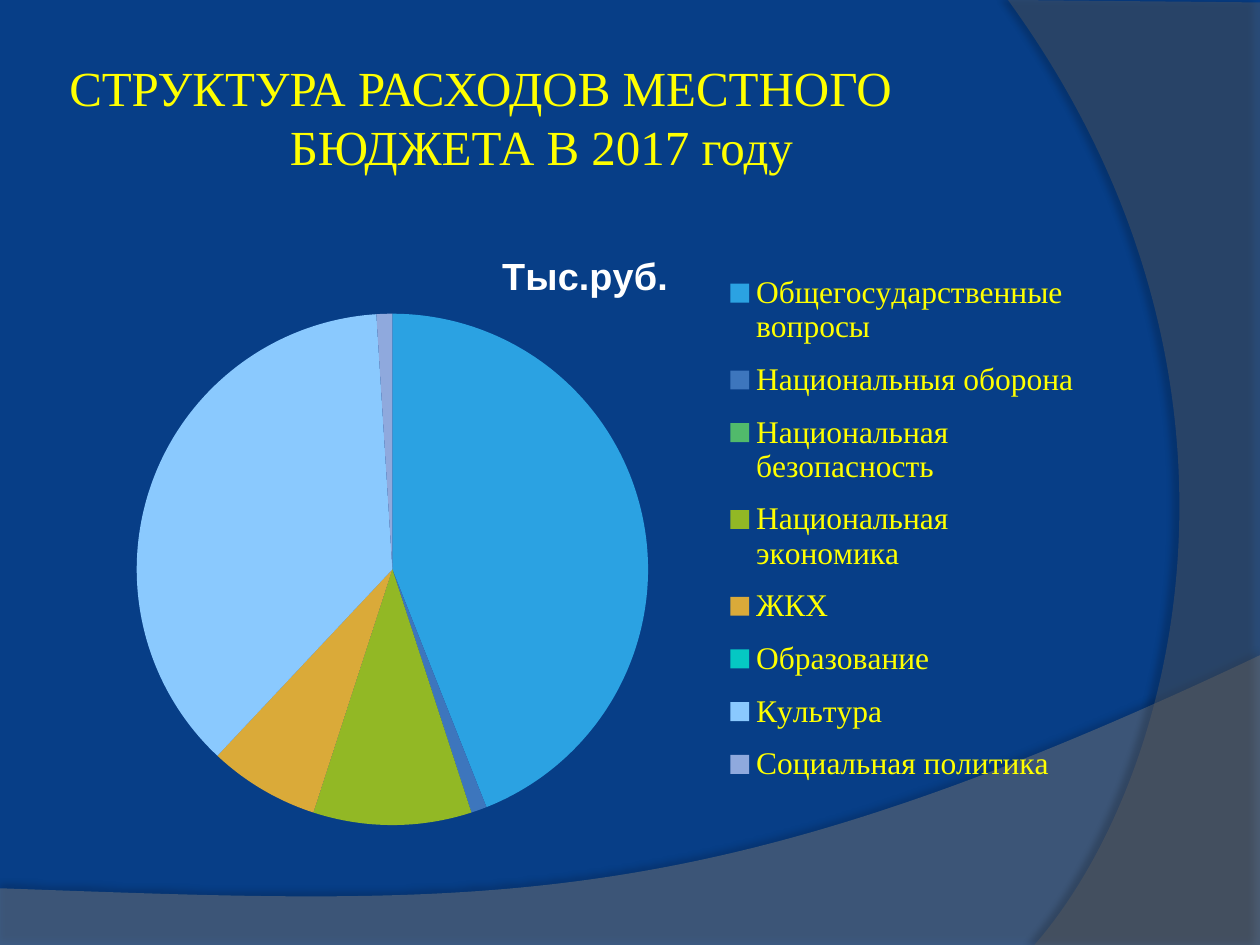
import pptx
import pptx.chart.data
import pptx.dml.color
import pptx.enum.chart
import pptx.enum.text
import pptx.oxml
import pptx.oxml.ns
import pptx.util
from lxml import etree

RGB = pptx.dml.color.RGBColor
qn = pptx.oxml.ns.qn
NAVY = RGB(0x07, 0x3E, 0x87)
WAVE_GREY = RGB(0x7F, 0x7F, 0x7F)
ARC_GREY = RGB(0x5E, 0x5E, 0x5E)
YELLOW = RGB(0xFF, 0xFF, 0x00)
WHITE = RGB(0xFF, 0xFF, 0xFF)
WIDTH, HEIGHT = pptx.util.Inches(10), pptx.util.Inches(7.5)
SERIF, SANS = "Times New Roman", "Arial"
UNITS = 1000  # outline units to the inch

EXPENSES = [
    ("Общегосударственные вопросы", 44, RGB(0x2B, 0xA2, 0xE2)),
    ("Национальныя оборона", 1, RGB(0x3D, 0x76, 0xBD)),
    ("Национальная безопасность", 0, RGB(0x51, 0xBA, 0x6B)),
    ("Национальная экономика", 10, RGB(0x92, 0xB8, 0x25)),
    ("ЖКХ", 7, RGB(0xDA, 0xAA, 0x39)),
    ("Образование", 0, RGB(0x05, 0xC8, 0xC3)),
    ("Культура", 37, RGB(0x8A, 0xC9, 0xFE)),
    ("Социальная политика", 1, RGB(0x8F, 0xA9, 0xDD)),
]


def box(left, top, width, height):
    """Turn shares of the slide's size into lengths."""
    return (int(WIDTH * left), int(HEIGHT * top),
            int(WIDTH * width), int(HEIGHT * height))


def bend_first_side(sp, corners, controls):
    """Make the first side of an outline a cubic curve."""
    line = next(sp._element.iter(qn("a:lnTo")))
    curve = etree.Element(qn("a:cubicBezTo"))
    left, top = (min(values) for values in zip(*corners))
    for x, y in controls:
        etree.SubElement(curve, qn("a:pt"),
                         x=str(round((x - left) * UNITS)),
                         y=str(round((y - top) * UNITS)))
    line.addprevious(curve)
    curve.append(line[0])
    line.getparent().remove(line)


def add_band(s, corners, controls, color, opacity,
             shadow_opacity, distance, direction):
    """Translucent outline, in inches, with a soft shadow."""
    points = [(round(x * UNITS), round(y * UNITS)) for x, y in corners]
    builder = s.shapes.build_freeform(
        *points[0], scale=pptx.util.Inches(1) / UNITS)
    builder.add_line_segments(points[1:], close=True)
    sp = builder.convert_to_shape()
    bend_first_side(sp, corners, controls)
    sp.fill.solid()
    sp.fill.fore_color.rgb = color
    sp.line.fill.background()
    clr = next(sp._element.spPr.iter(qn("a:srgbClr")))
    etree.SubElement(clr, qn("a:alpha"), val=str(opacity * 1000))
    sp.shadow.inherit = False
    effects = sp._element.spPr.find(qn("a:effectLst"))
    shadow = etree.SubElement(
        effects, qn("a:outerShdw"), blurRad=str(pptx.util.Pt(4)),
        dist=str(pptx.util.Pt(distance)), dir=str(direction * 60000),
        algn="ctr", rotWithShape="0")
    black = etree.SubElement(shadow, qn("a:srgbClr"), val="000000")
    etree.SubElement(black, qn("a:alpha"), val=str(shadow_opacity * 1000))


def set_font(font, name, size, color):
    font.name, font.size = name, pptx.util.Pt(size)
    font.color.rgb = color


def add_title(s, lines):
    """Heading given as (text, left indent in inches) lines."""
    tf = s.shapes.add_textbox(*box(0.05, 0.04, 0.817, 0.167)).text_frame
    tf.word_wrap = True
    tf.vertical_anchor = pptx.enum.text.MSO_ANCHOR.MIDDLE
    tf.margin_left = tf.margin_right = pptx.util.Inches(0.05)
    for i, (text, indent) in enumerate(lines):
        p = tf.add_paragraph() if i else tf.paragraphs[0]
        p.text = text
        set_font(p.font, SERIF, 28, YELLOW)
        p._p.get_or_add_pPr().set("marL", str(pptx.util.Inches(indent)))


def place(element, before, target=None, **shares):
    """Set a chart part's manual layout in shares of the chart."""
    for old in element.findall(qn("c:layout")):
        element.remove(old)
    layout = etree.Element(qn("c:layout"))
    manual = etree.SubElement(layout, qn("c:manualLayout"))
    if target:
        etree.SubElement(manual, qn("c:layoutTarget"), val=target)
    for axis in "xy":
        etree.SubElement(manual, qn(f"c:{axis}Mode"), val="edge")
    for name, share in shares.items():
        etree.SubElement(manual, qn(f"c:{name}"), val=str(share))
    element.find(qn(before)).addprevious(layout)


def add_pie(s, title, rows):
    data = pptx.chart.data.CategoryChartData()
    data.categories = [name for name, _, _ in rows]
    data.add_series(title, [value for _, value, _ in rows])
    chart = s.shapes.add_chart(
        pptx.enum.chart.XL_CHART_TYPE.PIE,
        *box(0.05, 0.233, 0.817, 0.66), data).chart
    set_font(chart.font, SANS, 18, WHITE)
    chart.has_title = True
    p = chart.chart_title.text_frame.paragraphs[0]
    p.text = title
    set_font(p.font, SANS, 21.6, WHITE)
    p.font.bold = True
    place(chart.chart_title._element, "c:overlay", x=0.42, y=0.04)
    chart.has_legend = True
    legend = chart.legend
    legend.position = pptx.enum.chart.XL_LEGEND_POSITION.RIGHT
    legend.include_in_layout = False
    set_font(legend.font, SERIF, 18, YELLOW)
    place(legend._element, "c:overlay", x=0.64, y=0.06, w=0.35, h=0.87)
    plot = chart.plots[0]
    plot.vary_by_categories = True
    place(plot._element.getparent(), "c:pieChart", "inner",
          x=0.07, y=0.15, w=0.5, h=0.82)
    for i, (_, _, color) in enumerate(rows):
        fill = plot.series[0].points[i].format.fill
        fill.solid()
        fill.fore_color.rgb = color


def main():
    prs = pptx.Presentation()
    prs.slide_width, prs.slide_height = WIDTH, HEIGHT
    s = prs.slides.add_slide(prs.slide_layouts[6])
    s.background.fill.solid()
    s.background.fill.fore_color.rgb = NAVY
    add_band(s, [(10, 5.2), (0, 7.05), (0, 7.51), (10, 7.51)],
             [(5.59, 7.29), (3.91, 7.19)], WAVE_GREY, 45, 35, 3.5, 270)
    add_band(s, [(8.21, 7.5), (8, 0), (10, 0.02), (10, 7.5)],
             [(9.35, 6.19), (10.18, 3)], ARC_GREY, 40, 45, 4, 180)
    add_title(s, [("СТРУКТУРА РАСХОДОВ МЕСТНОГО", 0),
                  ("БЮДЖЕТА В 2017 году", 1.75)])
    add_pie(s, "Тыс.руб.", EXPENSES)
    prs.save("out.pptx")


if __name__ == "__main__":
    main()
